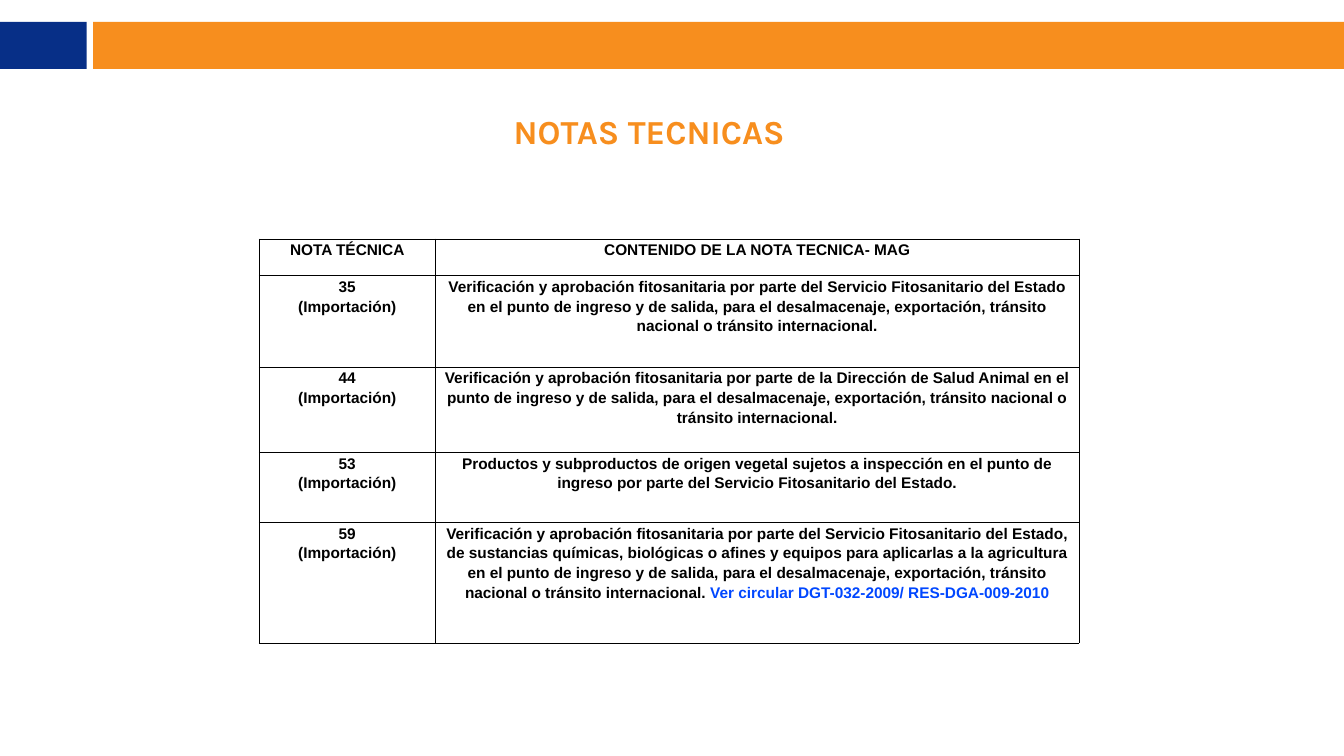
from dataclasses import dataclass

from lxml import etree
from pptx import Presentation
from pptx.dml.color import RGBColor
from pptx.enum.shapes import MSO_SHAPE
from pptx.enum.text import MSO_ANCHOR, PP_ALIGN
from pptx.oxml.ns import qn
from pptx.util import Inches, Pt

RECTANGLE = MSO_SHAPE.RECTANGLE
CENTER = PP_ALIGN.CENTER
MIDDLE = MSO_ANCHOR.MIDDLE
TOP = MSO_ANCHOR.TOP

COLUMNS, ROWS = 80, 45
TITLE_ONLY = 5


@dataclass(frozen=True)
class Theme:
    navy: str = "072F87"
    orange: str = "F78E1E"
    black: str = "000000"
    link_blue: str = "0047FF"
    title_font: str = "Karla"
    body_font: str = "Arial"
    title_size: int = 48
    body_size: int = 22
    border_width: int = 1
    line_spacing: float = 1.15


def apply(target, values):
    for attribute, value in values.items():
        setattr(target, attribute, value)


class SlideBuilder:
    def __init__(self, deck, theme):
        self.theme = theme
        self.column = deck.slide_width / COLUMNS
        self.row = deck.slide_height / ROWS
        self.slide = deck.slides.add_slide(deck.slide_layouts[TITLE_ONLY])

    def place(self, left, top, width, height):
        return (round(left * self.column), round(top * self.row),
                round(width * self.column), round(height * self.row))

    def format_font(self, font, name, size, color):
        apply(font, {"name": name, "size": Pt(size), "bold": True})
        font.color.rgb = RGBColor.from_string(color)

    def bar(self, area, color):
        bar = self.slide.shapes.add_shape(RECTANGLE, *self.place(*area))
        bar.shadow.inherit = False
        bar.fill.solid()
        bar.fill.fore_color.rgb = RGBColor.from_string(color)
        bar.line.fill.background()

    def title(self, area, wording):
        heading = self.slide.shapes.title
        apply(heading, dict(zip(("left", "top", "width", "height"), self.place(*area))))
        frame = heading.text_frame
        margins = dict.fromkeys(
            ("margin_left", "margin_top", "margin_right", "margin_bottom"), Inches(0.06))
        apply(frame, {"text": wording, "vertical_anchor": MIDDLE, "word_wrap": True, **margins})
        paragraph = frame.paragraphs[0]
        paragraph.alignment = CENTER
        self.format_font(paragraph.runs[0].font, self.theme.title_font,
                         self.theme.title_size, self.theme.orange)

    def border(self, cell):
        properties = cell._tc.get_or_add_tcPr()
        for position, side in enumerate(("lnL", "lnR", "lnT", "lnB")):
            line = etree.Element(qn(f"a:{side}"), w=str(Pt(self.theme.border_width)))
            fill = etree.SubElement(line, qn("a:solidFill"))
            etree.SubElement(fill, qn("a:srgbClr"), val=self.theme.black)
            properties.insert(position, line)

    def cell(self, cell, paragraphs):
        apply(cell, {"margin_left": Inches(0.1), "margin_right": Inches(0.1),
                     "margin_top": 0, "margin_bottom": 0, "vertical_anchor": TOP})
        cell.fill.background()
        self.border(cell)
        frame = cell.text_frame
        for index, runs in enumerate(paragraphs):
            paragraph = frame.add_paragraph() if index else frame.paragraphs[0]
            apply(paragraph, {"alignment": CENTER, "line_spacing": self.theme.line_spacing})
            for wording, color in runs:
                run = paragraph.add_run()
                run.text = wording
                self.format_font(run.font, self.theme.body_font, self.theme.body_size, color)

    def table(self, left, top, widths, heights, content):
        area = self.place(left, top, sum(widths), sum(heights))
        table = self.slide.shapes.add_table(len(heights), len(widths), *area).table
        apply(table, {"first_row": False, "horz_banding": False})
        for column, width in zip(table.columns, widths):
            column.width = round(width * self.column)
        for row, height, entries in zip(table.rows, heights, content):
            row.height = round(height * self.row)
            for cell, paragraphs in zip(row.cells, entries):
                self.cell(cell, paragraphs)


def note_rows(theme):
    approval = "Verificación y aprobación fitosanitaria por parte "
    transit = ("en el punto de ingreso y de salida, para el desalmacenaje, exportación, "
               "tránsito nacional o tránsito internacional.")
    service = "del Servicio Fitosanitario del Estado"
    notes = {
        "35": [f"{approval}{service} {transit}"],
        "44": [f"{approval}de la Dirección de Salud Animal {transit}"],
        "53": ["Productos y subproductos de origen vegetal sujetos a inspección "
               f"en el punto de ingreso por parte {service}."],
        "59": [f"{approval}{service}, de sustancias químicas, biológicas o afines "
               f"y equipos para aplicarlas a la agricultura {transit}",
               " Ver circular DGT-032-2009/ RES-DGA-009-2010"],
    }
    header = [[[(label, theme.black)]]
              for label in ("NOTA TÉCNICA", "CONTENIDO DE LA NOTA TECNICA- MAG")]
    rows = [header]
    for number, parts in notes.items():
        label = [[(number, theme.black)], [("(Importación)", theme.black)]]
        rows.append([label, [list(zip(parts, (theme.black, theme.link_blue)))]])
    return rows


def main():
    deck = Presentation()
    apply(deck, {"slide_width": Inches(26.67), "slide_height": Inches(15)})
    theme = Theme()
    builder = SlideBuilder(deck, theme)

    bar_top, bar_height, navy_end, orange_start = 1.3, 2.8, 5.16, 5.55
    builder.bar((0, bar_top, navy_end, bar_height), theme.navy)
    builder.bar((orange_start, bar_top, COLUMNS - orange_start, bar_height), theme.orange)
    builder.title((11.64, 6.45, 54, 2.76), "NOTAS TECNICAS")
    builder.table(15.42, 14.22, (10.5, 38.3), (2.19, 5.46, 5.07, 4.17, 7.17),
                  note_rows(theme))
    deck.save("out.pptx")


if __name__ == "__main__":
    main()
